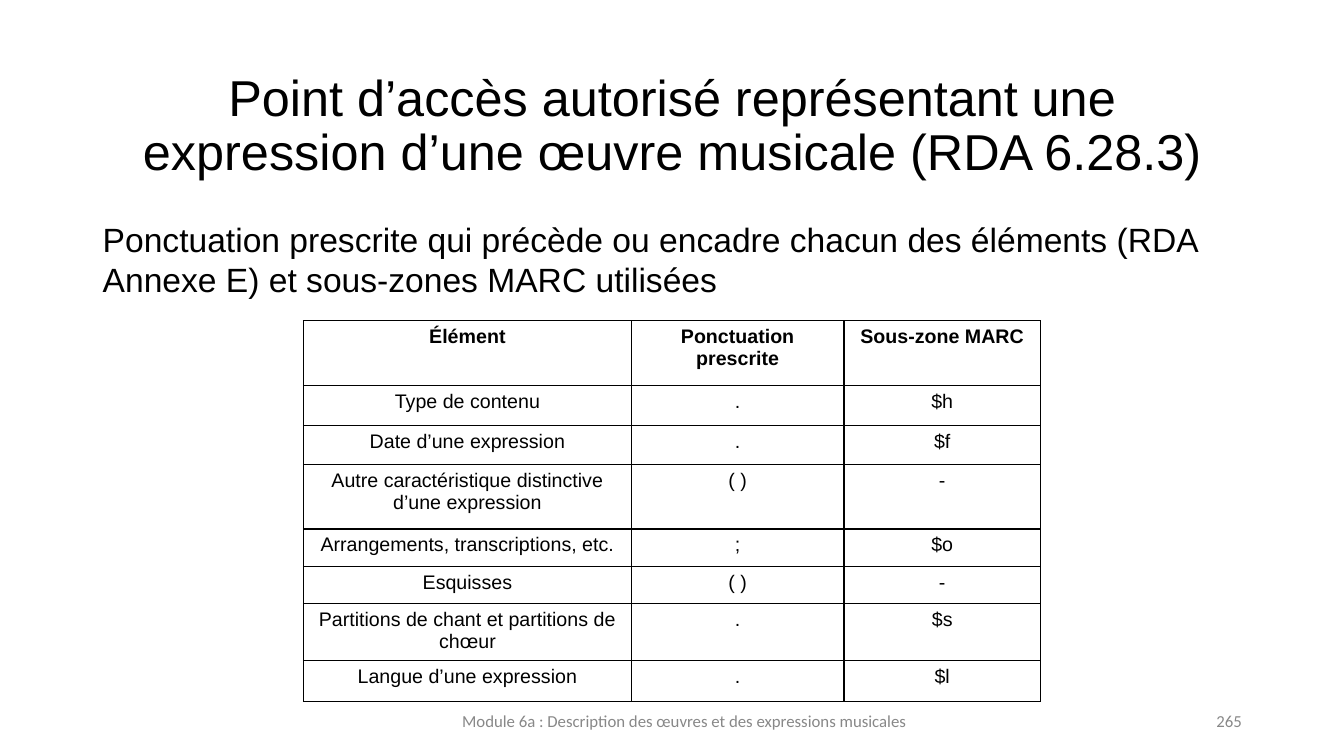
from dataclasses import dataclass

from lxml.etree import SubElement
from pptx import Presentation
from pptx.dml.color import RGBColor
from pptx.enum.text import MSO_ANCHOR as Anchor, PP_ALIGN as Align
from pptx.oxml.ns import qn
from pptx.util import Cm, Pt


@dataclass(frozen=True)
class Theme:
    text: str = "000000"
    muted: str = "888888"
    border: str = "000000"
    font: str = "Arial"
    footer_font: str = "Calibri"
    title_size: int = 36
    body_size: int = 24
    table_size: int = 14
    footer_size: int = 12


THEME = Theme()

# Content
TITLE = "Point d’accès autorisé représentant une expression d’une œuvre musicale (RDA 6.28.3)"
BODY = ("Ponctuation prescrite qui précède ou encadre chacun des éléments "
        "(RDA Annexe E) et sous-zones MARC utilisées")
FOOTER = "Module 6a : Description des œuvres et des expressions musicales"
PAGE = "265"
COLUMN_WIDTHS = [8.26, 5.36, 4.95]
ROWS = [  # height in cm, then the cells
    (1.63, ("Élément", "Ponctuation prescrite", "Sous-zone MARC")),
    (1.02, ("Type de contenu", ".", "$h")),
    (0.97, ("Date d’une expression", ".", "$f")),
    (1.63, ("Autre caractéristique distinctive d’une expression", "( )", "-")),
    (0.94, ("Arrangements, transcriptions, etc.", ";", "$o")),
    (0.94, ("Esquisses", "( )", "-")),
    (1.36, ("Partitions de chant et partitions de chœur", ".", "$s")),
    (1.02, ("Langue d’une expression", ".", "$l")),
]

# Layout, in cm
LEFT, WIDTH = 2.34, 29.21
FOOTER_TOP, FOOTER_HEIGHT = 17.65, 1.02
TABLE_LEFT, TABLE_TOP = 7.65, 8.08


def write(tf, text, size, align=Align.LEFT, font=THEME.font, color=THEME.text, bold=False):
    tf.text = text
    p = tf.paragraphs[0]
    p.alignment = align
    r = p.runs[0]
    r.font.name, r.font.size, r.font.bold = font, Pt(size), bold
    r.font.color.rgb = RGBColor.from_string(color)
    return p


def add_text(s, box, text, size, anchor=Anchor.MIDDLE, **style):
    tf = s.shapes.add_textbox(*map(Cm, box)).text_frame
    tf.word_wrap = True
    tf.vertical_anchor = anchor
    return write(tf, text, size, **style)


def set_borders(cell):
    tcPr = cell._tc.get_or_add_tcPr()
    for side in ("a:lnL", "a:lnR", "a:lnT", "a:lnB"):
        ln = SubElement(tcPr, qn(side), w=str(Pt(1)))
        fill = SubElement(ln, qn("a:solidFill"))
        SubElement(fill, qn("a:srgbClr"), val=THEME.border)


def add_punctuation_table(s):
    heights = [height for height, _ in ROWS]
    table = s.shapes.add_table(
        len(ROWS), len(COLUMN_WIDTHS), Cm(TABLE_LEFT), Cm(TABLE_TOP),
        Cm(sum(COLUMN_WIDTHS)), Cm(sum(heights))).table
    table.horz_banding = False
    for column, width in zip(table.columns, COLUMN_WIDTHS):
        column.width = Cm(width)
    for i, (height, texts) in enumerate(ROWS):
        table.rows[i].height = Cm(height)
        for j, text in enumerate(texts):
            cell = table.cell(i, j)
            write(cell.text_frame, text, THEME.table_size, Align.CENTER, bold=i == 0)
            set_borders(cell)
            cell.fill.background()


def main():
    prs = Presentation()
    prs.slide_width, prs.slide_height = Cm(33.87), Cm(19.05)
    s = prs.slides.add_slide(prs.slide_layouts[6])

    # Title and introduction
    p = add_text(s, (LEFT, 1.7, WIDTH, 3), TITLE, THEME.title_size, align=Align.CENTER)
    p.line_spacing = 0.9
    add_text(s, (LEFT, 5.38, WIDTH, 11.79), BODY, THEME.body_size, Anchor.TOP)

    # Footer and page number
    muted = {"font": THEME.footer_font, "color": THEME.muted}
    add_text(s, (11.23, FOOTER_TOP, 12.04, FOOTER_HEIGHT), FOOTER,
             THEME.footer_size, align=Align.CENTER, **muted)
    add_text(s, (23.93, FOOTER_TOP, 7.62, FOOTER_HEIGHT), PAGE,
             THEME.footer_size, align=Align.RIGHT, **muted)

    # Table of punctuation and subfields
    add_punctuation_table(s)
    prs.save("out.pptx")


if __name__ == "__main__":
    main()
